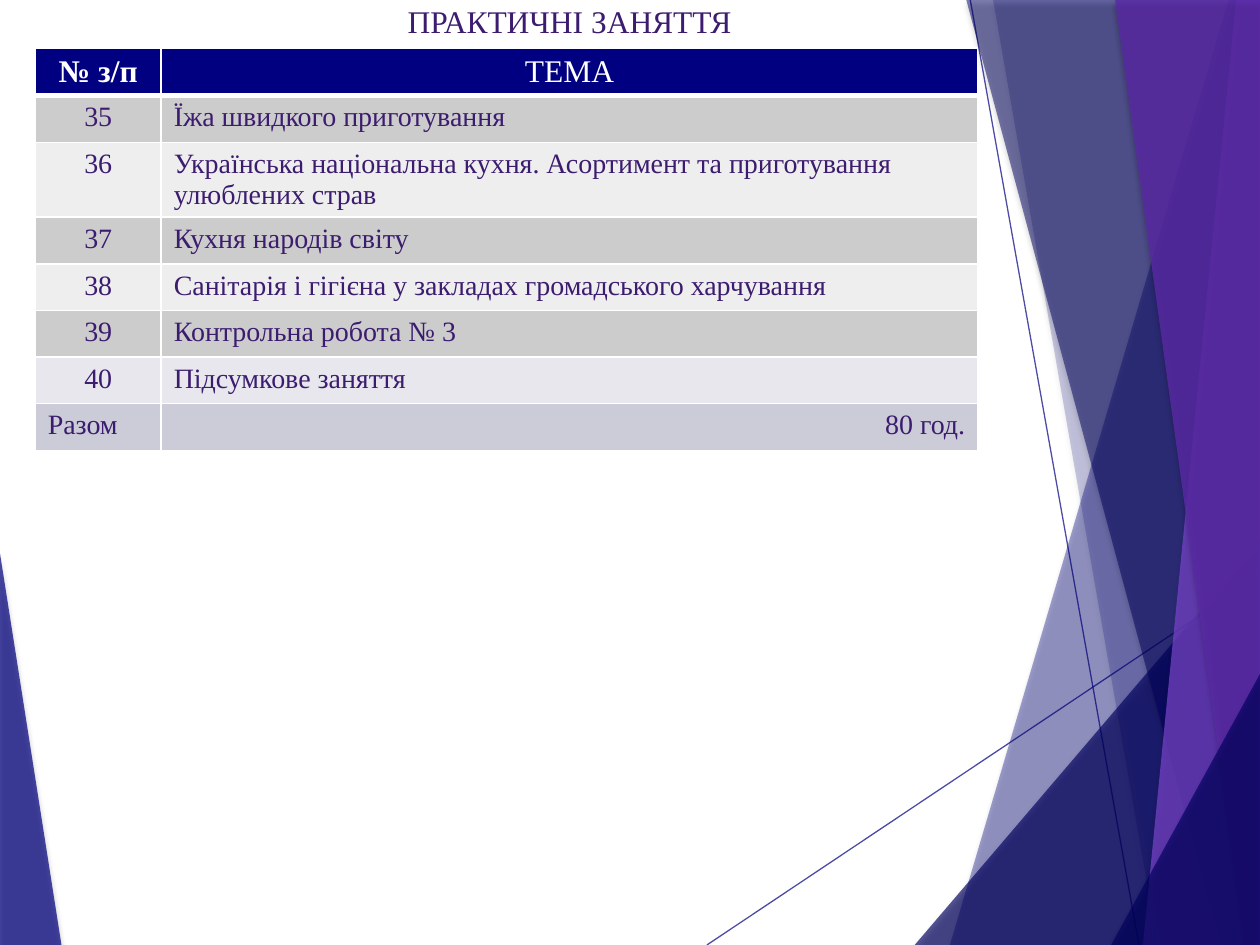
from lxml.etree import SubElement
from pptx import Presentation
from pptx.dml.color import RGBColor
from pptx.enum.shapes import MSO_CONNECTOR
from pptx.enum.text import PP_ALIGN
from pptx.oxml.ns import qn
from pptx.util import Cm, Pt

FONT = "Times New Roman"
WHITE = RGBColor(0xFF, 0xFF, 0xFF)
BLACK = RGBColor(0, 0, 0)
NAVY = RGBColor(0, 0, 0x80)
DARK_NAVY = RGBColor(0, 0, 0x60)
LILAC = RGBColor(0x7B, 0x46, 0xD0)
VIOLET = RGBColor(0x5A, 0x2A, 0xA6)
PLUM = RGBColor(0x3C, 0x1C, 0x6F)
GREY = RGBColor(0xCC, 0xCC, 0xCC)
PALE_GREY = RGBColor(0xEE, 0xEE, 0xEE)
PALE_BLUE = RGBColor(0xE7, 0xE7, 0xED)
BLUE_GREY = RGBColor(0xCC, 0xCC, 0xD8)

WIDTH, HEIGHT = 25.4, 19.05
ROW_HEIGHT = 0.94
COLUMN_WIDTHS = (2.54, 16.46)
CENTER, LEFT, RIGHT = PP_ALIGN.CENTER, PP_ALIGN.LEFT, PP_ALIGN.RIGHT

# Corner points, colour, opacity in percent
LEFT_FACET = ([(0, 11.15), (1.24, HEIGHT), (0, HEIGHT)], NAVY, 70)
RIGHT_FACETS = [
    ([(24.77, 0), (19.15, HEIGHT), (WIDTH, HEIGHT), (WIDTH, 0)], NAVY, 36),
    ([(20.02, 0), (23.34, HEIGHT), (WIDTH, HEIGHT), (WIDTH, 0)], NAVY, 20),
    ([(18.44, HEIGHT), (WIDTH, 10.9), (WIDTH, HEIGHT)], DARK_NAVY, 66),
    ([(19.48, 0), (24.61, HEIGHT), (WIDTH, HEIGHT), (WIDTH, 0)], DARK_NAVY, 50),
    ([(24.92, 0), (23.04, HEIGHT), (WIDTH, HEIGHT), (WIDTH, 0)], LILAC, 70),
    ([(22.48, 0), (25.1, HEIGHT), (WIDTH, HEIGHT), (WIDTH, 0)], VIOLET, 82),
    ([(22.4, HEIGHT), (WIDTH, 13.59), (WIDTH, HEIGHT)], DARK_NAVY, 66),
]
RAYS = [((14.25, HEIGHT), (WIDTH, 11.6)), ((19.56, 0), (22.96, HEIGHT))]

# Number, topic, row fill
LESSONS = [
    ("35", "Їжа швидкого приготування", GREY),
    ("36", "Українська національна кухня. Асортимент та приготування "
           "улюблених страв", PALE_GREY),
    ("37", "Кухня народів світу", GREY),
    ("38", "Санітарія і гігієна у закладах громадського харчування", PALE_GREY),
    ("39", "Контрольна робота № 3", GREY),
    ("40", "Підсумкове заняття", PALE_BLUE),
]


def write(frame, text, size=16, color=PLUM, bold=False, align=LEFT):
    para = frame.paragraphs[0]
    para.alignment = align
    span = para.add_run()
    span.text = text
    span.font.name = FONT
    span.font.size = Pt(size)
    span.font.bold = bold
    span.font.color.rgb = color


def add_color(parent, color, opacity=100):
    node = SubElement(parent, qn("a:srgbClr"), val=str(color))
    SubElement(node, qn("a:alpha"), val=str(opacity * 1000))


def set_opacity(properties, opacity):
    node = next(properties.iter(qn("a:srgbClr")))
    SubElement(node, qn("a:alpha"), val=str(opacity * 1000))


def add_border(cell, side, width):
    line = SubElement(cell._tc.get_or_add_tcPr(), qn(f"a:ln{side}"),
                      w=str(Pt(width)))
    add_color(SubElement(line, qn("a:solidFill")), WHITE)


class SlideBuilder:
    def __init__(self, page):
        self.page = page

    def facet(self, points, color, opacity):
        """Draw a translucent polygon with a soft shadow below it."""
        corners = [(Cm(x), Cm(y)) for x, y in points]
        builder = self.page.shapes.build_freeform(*corners[0])
        builder.add_line_segments(corners[1:], close=True)
        shape = builder.convert_to_shape()
        shape.fill.solid()
        shape.fill.fore_color.rgb = color
        shape.line.fill.background()
        properties = shape._element.spPr
        set_opacity(properties, opacity)
        effects = SubElement(properties, qn("a:effectLst"))
        shadow = SubElement(effects, qn("a:outerShdw"), blurRad=str(Pt(3)),
                            dist=str(Pt(2)), dir="5400000", rotWithShape="0")
        add_color(shadow, BLACK, 35)

    def ray(self, start, end):
        line = self.page.shapes.add_connector(
            MSO_CONNECTOR.STRAIGHT, *(Cm(value) for value in start + end))
        line.line.width = Pt(0.75)
        line.line.color.rgb = NAVY
        set_opacity(line._element.spPr, 70)
        SubElement(line._element.spPr, qn("a:effectLst"))

    def title(self, text, left, top, width, height):
        box = self.page.shapes.add_textbox(Cm(left), Cm(top), Cm(width), Cm(height))
        box.text_frame.word_wrap = True
        write(box.text_frame, text, size=18, align=CENTER)

    def cell(self, cell, text, fill, top=0.96, bottom=0.96, **style):
        for side, width in (("L", 0.96), ("R", 0.96), ("T", top), ("B", bottom)):
            add_border(cell, side, width)
        cell.fill.solid()
        cell.fill.fore_color.rgb = fill
        write(cell.text_frame, text, **style)

    def lesson_table(self, left, top):
        count = len(LESSONS) + 2
        table = self.page.shapes.add_table(
            count, 2, Cm(left), Cm(top), Cm(sum(COLUMN_WIDTHS)),
            Cm(ROW_HEIGHT * count)).table
        for column, width in zip(table.columns, COLUMN_WIDTHS):
            column.width = Cm(width)
        for row in table.rows:
            row.height = Cm(ROW_HEIGHT)

        header = dict(bottom=3, size=18, color=WHITE, align=CENTER)
        self.cell(table.cell(0, 0), "№ з/п", NAVY, bold=True, **header)
        self.cell(table.cell(0, 1), "ТЕМА", NAVY, **header)
        for row, (number, topic, fill) in enumerate(LESSONS, start=1):
            edge = 3 if row == 1 else 0.96
            self.cell(table.cell(row, 0), number, fill, top=edge, align=CENTER)
            self.cell(table.cell(row, 1), topic, fill, top=edge)
        self.cell(table.cell(count - 1, 0), "Разом", BLUE_GREY)
        self.cell(table.cell(count - 1, 1), "80 год.", BLUE_GREY, align=RIGHT)


def main():
    deck = Presentation()
    deck.slide_width, deck.slide_height = Cm(WIDTH), Cm(HEIGHT)
    builder = SlideBuilder(deck.slides.add_slide(deck.slide_layouts[6]))
    builder.facet(*LEFT_FACET)
    for start, end in RAYS:
        builder.ray(start, end)
    for facet in RIGHT_FACETS:
        builder.facet(*facet)
    builder.lesson_table(0.71, 0.97)
    builder.title("ПРАКТИЧНІ ЗАНЯТТЯ", 5.11, -0.08, 12.75, 1.02)
    deck.save("out.pptx")


if __name__ == "__main__":
    main()
